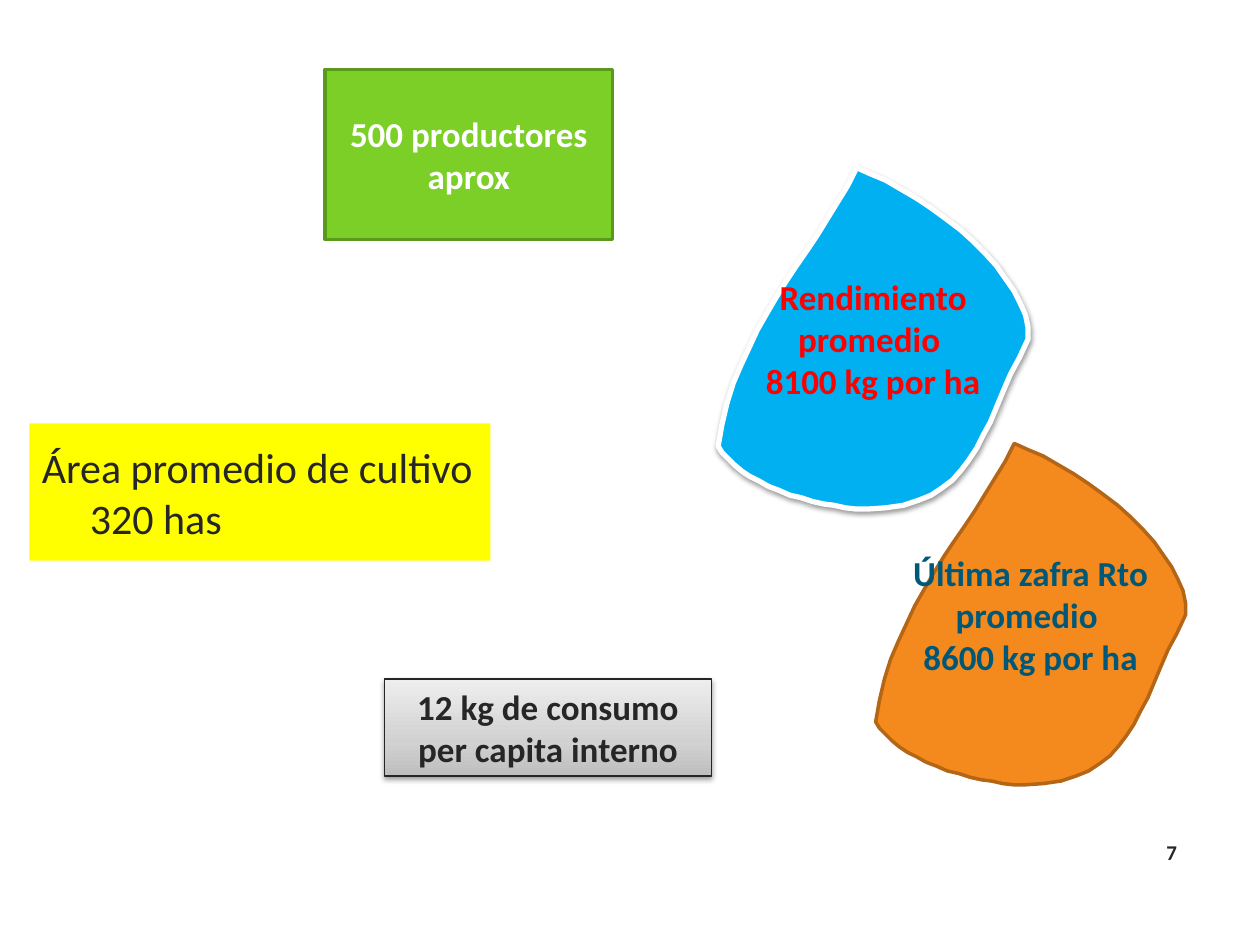
from lxml.etree import SubElement as Sub
from copy import deepcopy
from pptx import Presentation
from pptx.dml.color import RGBColor as RGB
from pptx.enum.shapes import MSO_SHAPE as Kind
from pptx.enum.text import MSO_ANCHOR as Anchor, PP_ALIGN as Align
from pptx.oxml.ns import qn
from pptx.util import Pt

HUES = {
    "blue": "00B0F0", "orange": "F4891E", "rust": "B56516", "red": "FF0000",
    "teal": "005878", "green": "7BCF27", "moss": "5B991D", "yellow": "FFFF00",
    "white": "FFFFFF", "ink": "262626", "edge": "252525", "black": "000000",
    "dark": "BEBEBE", "mid": "D1D1D1", "light": "EEEEEE",
}


def style(shape, fill, line, width, lines, color, size=20, bold=True, align=Align.CENTER):
    shape.shadow.inherit = False
    if fill:
        shape.fill.solid()
        shape.fill.fore_color.rgb = RGB.from_string(HUES[fill])
    if line:
        shape.line.color.rgb = RGB.from_string(HUES[line])
        shape.line.width = Pt(width)
    else:
        shape.line.fill.background()
    frame = shape.text_frame
    frame.word_wrap = True
    frame.vertical_anchor = Anchor.MIDDLE
    frame.text = "\n".join(lines)
    for para in frame.paragraphs:
        para.alignment = align
        for run in para.runs:
            run.font.name = "Calibri"
            run.font.size = Pt(size)
            run.font.bold = bold
            run.font.color.rgb = RGB.from_string(HUES[color])


def shade(shape):
    glow = shape._element.spPr.find(qn("a:effectLst"))
    drop = Sub(glow, qn("a:outerShdw"), blurRad=str(Pt(3.1)), dist=str(Pt(1.6)),
               dir="5400000", rotWithShape="0")
    tint = Sub(drop, qn("a:srgbClr"), val=HUES["black"])
    Sub(tint, qn("a:alpha"), val="38000")


deck = Presentation()
deck.slide_width, deck.slide_height = Pt(720), Pt(540)
slide = deck.slides.add_slide(deck.slide_layouts[6])
shapes = slide.shapes

tip, heel, foot, side = (110, 0), (0, 221), (118, 271), (246, 136)
curves = [
    (tip, (72, 75), (15, 125), heel),
    (heel, (15, 250), (75, 270), foot),
    (foot, (205, 268), (205, 215), side),
    (side, (250, 88), (170, 22), tip),
]
steps = 16
rim = []
for curve in curves:
    for step in range(steps):
        t = step / steps
        parts = ((1 - t) ** 3, 3 * t * (1 - t) ** 2, 3 * t ** 2 * (1 - t), t ** 3)
        rim.append(tuple(
            sum(part * knot[axis] for part, knot in zip(parts, curve))
            for axis in (0, 1)
        ))

leaves = [
    (410.4, 95.8, "blue", "white", 3, ["Rendimiento promedio ", "8100 kg por ha"], "red"),
    (500.4, 253.4, "orange", "rust", 2, ["Última zafra Rto promedio ", "8600 kg por ha"], "teal"),
]
for x, y, fill, line, width, lines, color in leaves:
    pen = shapes.build_freeform(*rim[0], scale=Pt(0.72))
    pen.add_line_segments(rim[1:], close=True)
    leaf = pen.convert_to_shape(Pt(x), Pt(y))
    style(leaf, fill, line, width, lines, color)
    if fill == "blue":
        shade(leaf)

usage = shapes.add_shape(Kind.RECTANGLE, Pt(219.6), Pt(388.1), Pt(187.2), Pt(55.4))
style(usage, None, "edge", 0.75, ["12 kg de consumo per capita interno"], "ink")
shade(usage)
usage.fill.gradient()
usage.fill.gradient_angle = 90
stops = usage._element.spPr.find(qn("a:gradFill")).find(qn("a:gsLst"))
stops.insert(1, deepcopy(stops[0]))
ramp = [(0, "dark"), (0.35, "mid"), (1, "light")]
for stop, (spot, hue) in zip(usage.fill.gradient_stops, ramp):
    stop.position = spot
    stop.color.rgb = RGB.from_string(HUES[hue])

farms = shapes.add_shape(Kind.RECTANGLE, Pt(185.8), Pt(39.6), Pt(164.2), Pt(97.2))
style(farms, "green", "moss", 2, ["500 productores aprox"], "white")

area = shapes.add_textbox(Pt(16.8), Pt(241.9), Pt(263.5), Pt(78.5))
style(area, "yellow", None, 0, ["Área promedio de cultivo", "320 has"], "ink", 24, False, Align.LEFT)
area.text_frame.paragraphs[1]._p.get_or_add_pPr().set("marL", str(Pt(27.5)))

page = shapes.add_textbox(Pt(511.9), Pt(472.3), Pt(167.8), Pt(28.8))
style(page, None, None, 0, ["7"], "ink", 12, True, Align.RIGHT)

deck.save("out.pptx")
